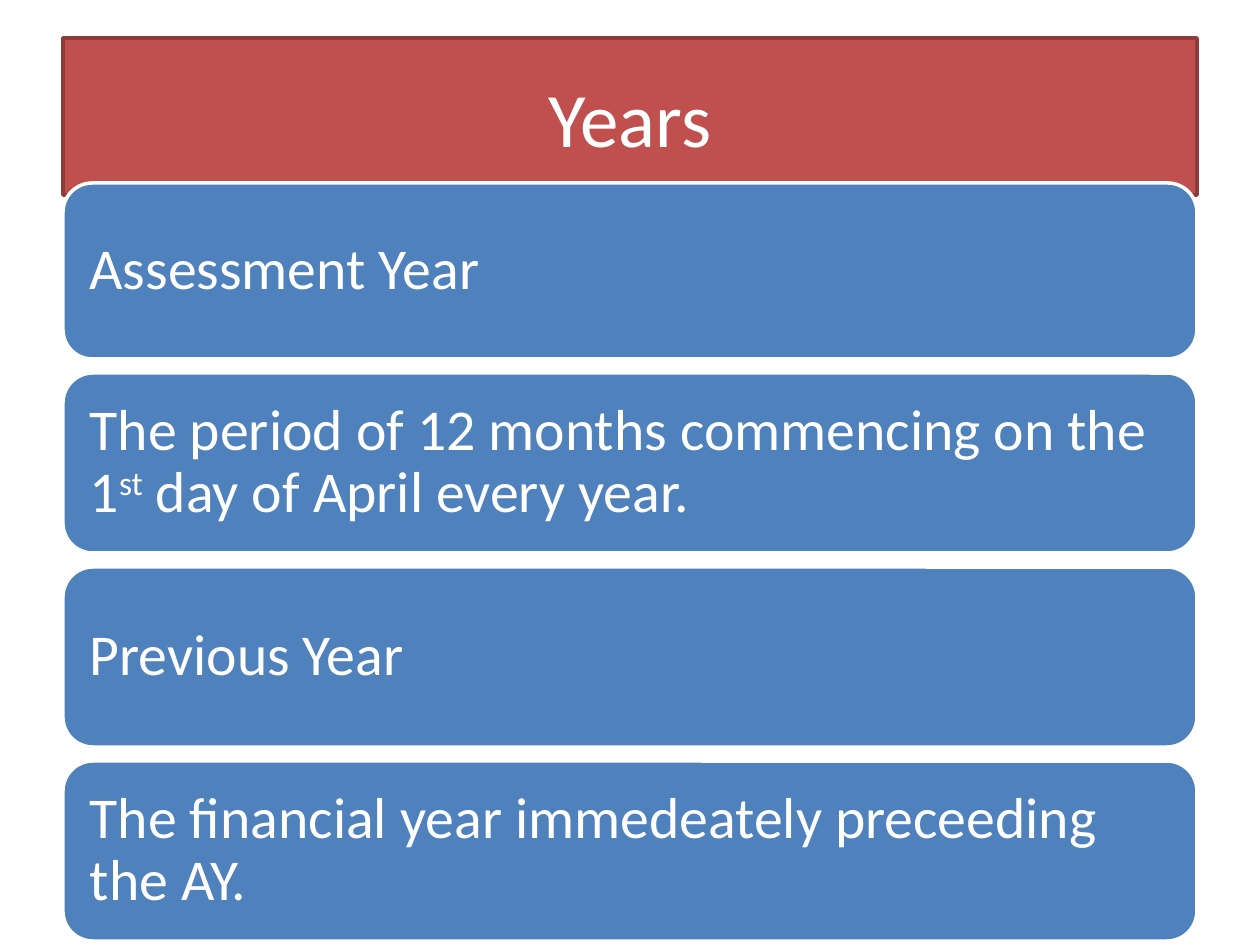
import pptx
import pptx.util
import pptx.dml.color
import pptx.enum.shapes
import pptx.enum.text

PX = 914400 / 126  # EMU per px


def px(length):
    return pptx.util.Emu(round(length * PX))


def paint(color_format, value):
    color_format.rgb = pptx.dml.color.RGBColor.from_string(value)


deck = pptx.Presentation()
deck.slide_width, deck.slide_height = px(1260), px(945)
slide = deck.slides.add_slide(deck.slide_layouts[5])

LEFT, WIDTH = 63, 1134

# Title banner
banner = slide.shapes.title
banner.left, banner.top, banner.width, banner.height = px(LEFT), px(38), px(WIDTH), px(157)

# Stacked definition cards: text pieces, each with its superscript offset
cards = [
    (176, [("Assessment Year", 0)]),
    (180, [("The period of 12 months commencing on the 1", 0), ("st", 30000),
           (" day of April every year.", 0)]),
    (180, [("Previous Year", 0)]),
    (180, [("The financial year immedeately preceeding the AY.", 0)]),
]
GAP = 14
LEFT_ALIGN, CENTER = pptx.enum.text.PP_ALIGN.LEFT, pptx.enum.text.PP_ALIGN.CENTER
blocks = [(banner, [("Years", 0)], "C0504D", "8E3B39", 44, CENTER, 1.0)]
top = 183
for height, pieces in cards:
    card = slide.shapes.add_shape(
        pptx.enum.shapes.MSO_SHAPE.ROUNDED_RECTANGLE,
        px(LEFT), px(top), px(WIDTH), px(height))
    card.shadow.inherit = False
    frame = card.text_frame
    frame.margin_left = frame.margin_right = px(18)
    frame.margin_top = frame.margin_bottom = px(18)
    blocks.append((card, pieces, "4F81BD", "FFFFFF", 33, LEFT_ALIGN, 0.9))
    top += height + GAP

# Fill, outline and wording of the banner and the cards
for block, pieces, fill, outline, size, align, spacing in blocks:
    block.fill.solid()
    paint(block.fill.fore_color, fill)
    paint(block.line.color, outline)
    block.line.width = pptx.util.Pt(2)

    frame = block.text_frame
    frame.word_wrap = True
    frame.vertical_anchor = pptx.enum.text.MSO_ANCHOR.MIDDLE
    paragraph = frame.paragraphs[0]
    paragraph.alignment = align
    paragraph.line_spacing = spacing
    for text, baseline in pieces:
        run = paragraph.add_run()
        run.text = text
        run.font.name = "Calibri"
        run.font.size = pptx.util.Pt(size)
        paint(run.font.color, "FFFFFF")
        if baseline:
            run._r.get_or_add_rPr().set("baseline", str(baseline))

deck.save("out.pptx")
